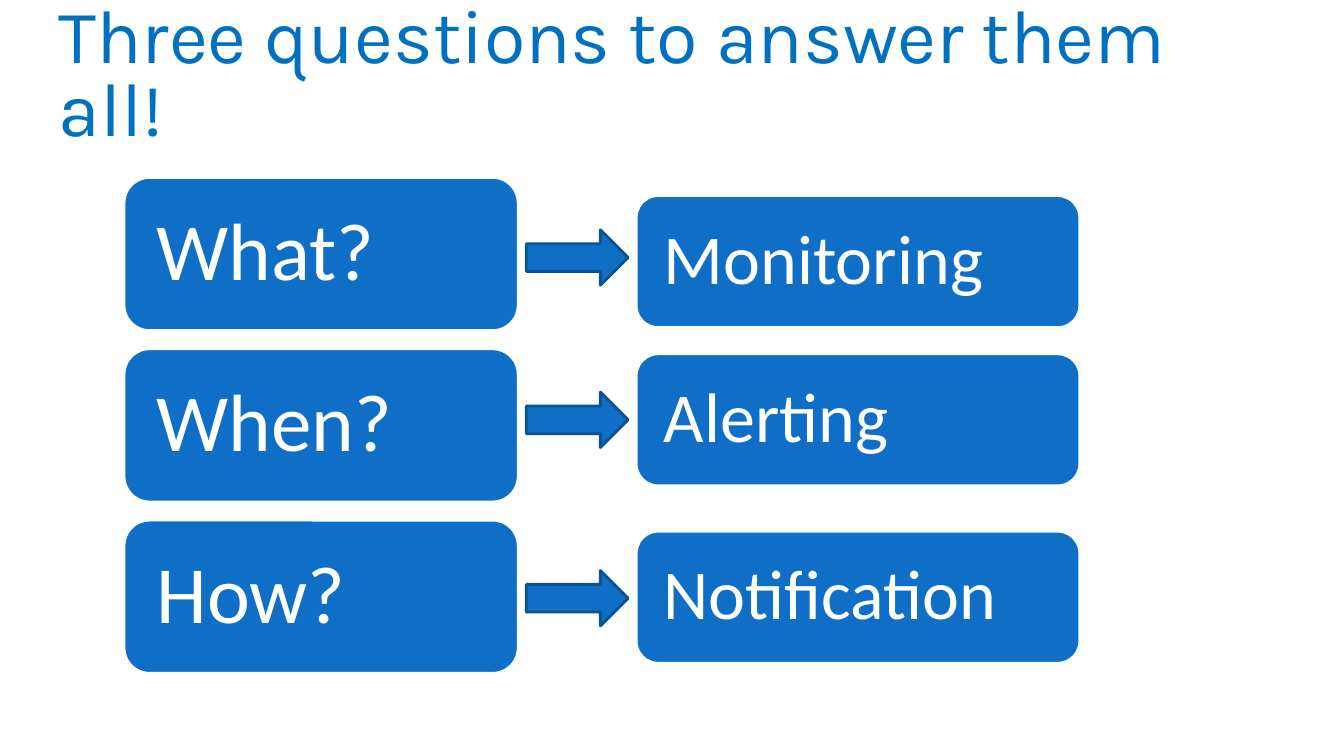
from pptx import Presentation
from pptx.dml.color import RGBColor
from pptx.enum.shapes import MSO_SHAPE
from pptx.enum.text import MSO_ANCHOR, PP_ALIGN
from pptx.util import Inches, Pt

ROUNDED = MSO_SHAPE.ROUNDED_RECTANGLE
ARROW = MSO_SHAPE.RIGHT_ARROW
MIDDLE = MSO_ANCHOR.MIDDLE
LEFT = PP_ALIGN.LEFT

COLORS = {
    "white": "FFFFFF",
    "title": "0070C0",
    "box": "0F6FC6",
    "arrow edge": "0B5292",
}
QUESTION_TOP, QUESTION_STEP = 1.76, 1.7
ROWS = [
    ("What?", "Monitoring", 1.94, 2.28),
    ("When?", "Alerting", 3.51, 3.89),
    ("How?", "Notification", 5.27, 5.66),
]


class QuestionSlide:
    def __init__(self, deck):
        self.page = deck.slides.add_slide(deck.slide_layouts[5])
        self.page.background.fill.solid()
        self.page.background.fill.fore_color.rgb = self.color("white")

    def color(self, name):
        return RGBColor.from_string(COLORS[name])

    def set_text(self, shape, text, font, size, color, spacing):
        frame = shape.text_frame
        frame.word_wrap = True
        frame.vertical_anchor = MIDDLE
        frame.text = text
        para = frame.paragraphs[0]
        para.alignment = LEFT
        para.line_spacing = spacing
        para.font.name = font
        para.font.size = Pt(size)
        para.font.color.rgb = self.color(color)

    def title(self, text, left, top, width, height):
        title = self.page.shapes.title
        title.left, title.top = Inches(left), Inches(top)
        title.width, title.height = Inches(width), Inches(height)
        self.set_text(title, text, "Karla", 54, "title", 0.8)

    def shape(self, kind, edge, left, top, width, height):
        shape = self.page.shapes.add_shape(
            kind, Inches(left), Inches(top), Inches(width), Inches(height))
        shape.shadow.inherit = False
        shape.fill.solid()
        shape.fill.fore_color.rgb = self.color("box")
        shape.line.color.rgb = self.color(edge)
        shape.line.width = Pt(2)
        return shape

    def box(self, text, size, inset, left, top, width, height):
        box = self.shape(ROUNDED, "white", left, top, width, height)
        frame = box.text_frame
        frame.margin_left = frame.margin_right = Inches(inset)
        frame.margin_top = frame.margin_bottom = Inches(inset)
        self.set_text(box, text, "Calibri", size, "white", 0.9)

    def arrow(self, top):
        self.shape(ARROW, "arrow edge", 5.22, top, 1.01, 0.55)


def main():
    deck = Presentation()
    deck.slide_width, deck.slide_height = Inches(13.33), Inches(7.5)
    slide = QuestionSlide(deck)
    slide.title("Three questions to answer them all!", 0.48, 0.15, 12, 1.25)
    for row, (question, answer, answer_top, arrow_top) in enumerate(ROWS):
        question_top = QUESTION_TOP + row * QUESTION_STEP
        slide.box(question, 58, 0.25, 1.23, question_top, 3.91, 1.52)
        slide.box(answer, 50, 0.21, 6.31, answer_top, 4.4, 1.31)
        slide.arrow(arrow_top)
    deck.save("out.pptx")


if __name__ == "__main__":
    main()
